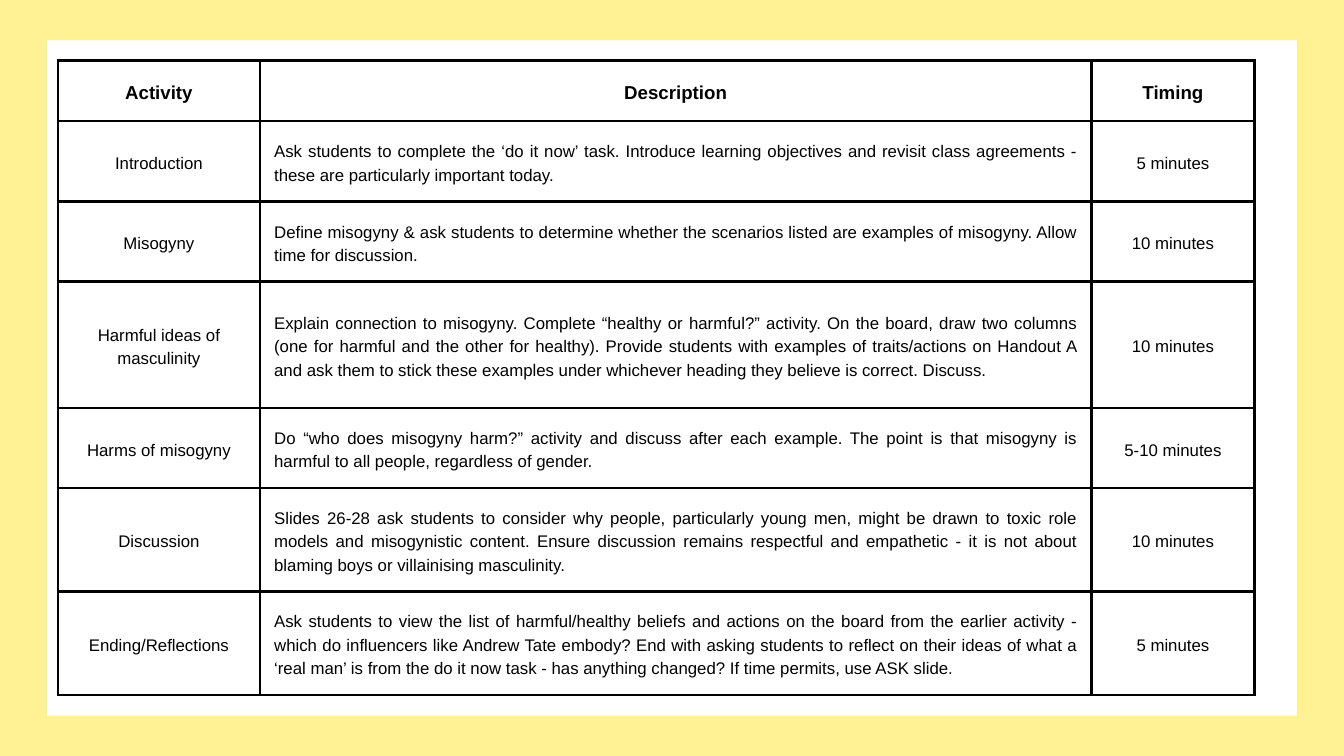
from lxml.etree import SubElement
from pptx import Presentation
from pptx.dml.color import RGBColor
from pptx.enum.shapes import MSO_SHAPE as Shape
from pptx.enum.text import MSO_ANCHOR as Anchor, PP_ALIGN as Align
from pptx.oxml.ns import qn
from pptx.util import Inches, Pt

YELLOW = RGBColor(0xFF, 0xF2, 0x95)
WHITE = RGBColor(0xFF, 0xFF, 0xFF)
BLACK = RGBColor(0x00, 0x00, 0x00)

FONT = "Arial"
LINE_RATIO = 1.4
CELL_MARGIN = Inches(0.21)
BORDER_WIDTH = Pt(3)

COLUMN_WIDTHS = [3.01, 12.37, 2.43]
HEADER_HEIGHT = 0.9
HEADINGS = ("Activity", "Description", "Timing")

# Row height in inches, then activity, description and timing
ACTIVITIES = [
    (1.2, "Introduction",
     "Ask students to complete the ‘do it now’ task. Introduce learning objectives and "
     "revisit class agreements - these are particularly important today.",
     "5 minutes"),
    (1.19, "Misogyny",
     "Define misogyny & ask students to determine whether the scenarios listed are "
     "examples of misogyny. Allow time for discussion.",
     "10 minutes"),
    (1.88, "Harmful ideas of masculinity",
     "Explain connection to misogyny. Complete “healthy or harmful?” activity. On the "
     "board, draw two columns (one for harmful and the other for healthy). Provide "
     "students with examples of traits/actions on Handout A and ask them to stick these "
     "examples under whichever heading they believe is correct. Discuss.",
     "10 minutes"),
    (1.19, "Harms of misogyny",
     "Do “who does misogyny harm?” activity and discuss after each example. The point is "
     "that misogyny is harmful to all people, regardless of gender.",
     "5-10 minutes"),
    (1.54, "Discussion",
     "Slides 26-28 ask students to consider why people, particularly young men, might be "
     "drawn to toxic role models and misogynistic content. Ensure discussion remains "
     "respectful and empathetic - it is not about blaming boys or villainising "
     "masculinity.",
     "10 minutes"),
    (1.54, "Ending/Reflections",
     "Ask students to view the list of harmful/healthy beliefs and actions on the board "
     "from the earlier activity - which do influencers like Andrew Tate embody? End with "
     "asking students to reflect on their ideas of what a ‘real man’ is from the do it "
     "now task - has anything changed? If time permits, use ASK slide.",
     "5 minutes"),
]


def add_panel(slide, left, top, width, height, color):
    panel = slide.shapes.add_shape(
        Shape.RECTANGLE, Inches(left), Inches(top), Inches(width), Inches(height))
    panel.shadow.inherit = False
    panel.fill.solid()
    panel.fill.fore_color.rgb = color
    panel.line.fill.background()


def write_text(frame, text, size=18, bold=False, align=Align.CENTER, color=BLACK):
    para = frame.paragraphs[0]
    para.alignment = align
    para.line_spacing = Pt(size * LINE_RATIO)
    span = para.add_run()
    span.text = text
    span.font.name = FONT
    span.font.size = Pt(size)
    span.font.bold = bold
    span.font.color.rgb = color


def set_borders(cell, color=BLACK):
    properties = cell._tc.get_or_add_tcPr()
    for side in ("a:lnL", "a:lnR", "a:lnT", "a:lnB"):
        border = SubElement(properties, qn(side), w=str(BORDER_WIDTH))
        fill = SubElement(border, qn("a:solidFill"))
        SubElement(fill, qn("a:srgbClr"), val=str(color))


def fill_cell(cell, text, **text_format):
    cell.vertical_anchor = Anchor.MIDDLE
    cell.margin_left = cell.margin_right = CELL_MARGIN
    cell.margin_top = cell.margin_bottom = CELL_MARGIN
    set_borders(cell)
    cell.fill.background()
    write_text(cell.text_frame, text, **text_format)


def add_lesson_table(slide, left, top):
    heights = [HEADER_HEIGHT] + [height for height, *_ in ACTIVITIES]
    table = slide.shapes.add_table(
        len(heights), len(COLUMN_WIDTHS), Inches(left), Inches(top),
        Inches(sum(COLUMN_WIDTHS)), Inches(sum(heights))).table
    table.first_row = table.horz_banding = False
    for column, width in zip(table.columns, COLUMN_WIDTHS):
        column.width = Inches(width)
    for row, height in zip(table.rows, heights):
        row.height = Inches(height)

    for column, heading in enumerate(HEADINGS):
        fill_cell(table.cell(0, column), heading, size=20, bold=True)
    alignments = (Align.CENTER, Align.JUSTIFY, Align.CENTER)
    for row, (_, *texts) in enumerate(ACTIVITIES, start=1):
        for column, (text, align) in enumerate(zip(texts, alignments)):
            fill_cell(table.cell(row, column), text, align=align)


def main():
    deck = Presentation()
    deck.slide_width, deck.slide_height = Inches(20), Inches(11.25)
    slide = deck.slides.add_slide(deck.slide_layouts[6])
    slide.background.fill.solid()
    slide.background.fill.fore_color.rgb = YELLOW
    add_panel(slide, 0.7, 0.6, 18.6, 10.05, WHITE)
    add_lesson_table(slide, 0.86, 0.9)
    deck.save("out.pptx")


if __name__ == "__main__":
    main()
